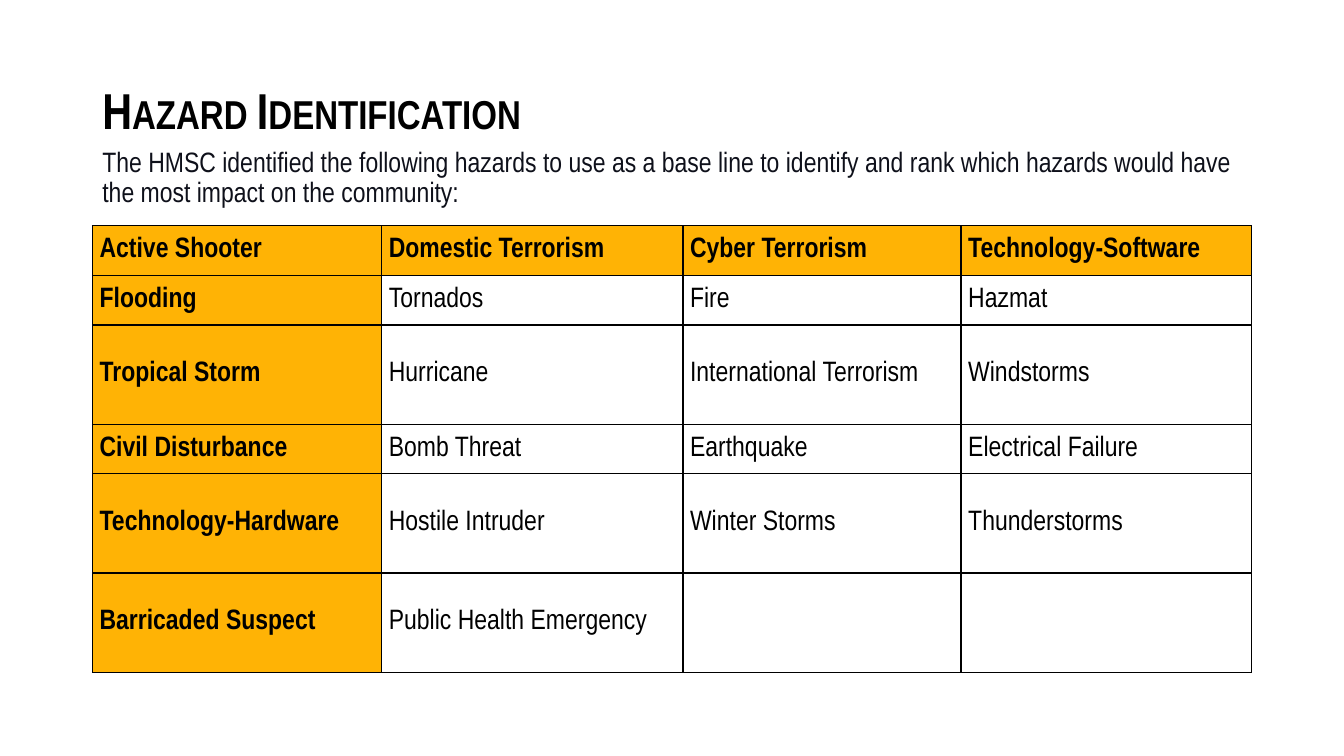
from dataclasses import dataclass

from lxml import etree
from pptx import Presentation
from pptx.dml.color import RGBColor
from pptx.enum.text import MSO_ANCHOR, PP_ALIGN
from pptx.oxml.ns import qn
from pptx.util import Cm, Pt

MIDDLE, TOP = MSO_ANCHOR.MIDDLE, MSO_ANCHOR.TOP
LEFT, JUSTIFY = PP_ALIGN.LEFT, PP_ALIGN.JUSTIFY


@dataclass(frozen=True)
class Theme:
    font: str = "Arial Narrow"
    black: str = "000000"
    ink: str = "0E101A"
    amber: str = "FFB305"
    white: str = "FFFFFF"
    title_size: int = 36
    text_size: int = 20
    border: int = 1


@dataclass(frozen=True)
class TextBlock:
    text: str
    top: float
    height: float
    size: int
    color: str
    anchor: MSO_ANCHOR
    bold: bool = False
    small_caps: bool = False
    space_before: int = 0


THEME = Theme()
MARGIN, CONTENT_WIDTH = 2.33, 29.21
TABLE_TOP = 5.69
COLUMN_WIDTHS = (7.29, 7.59, 7.01, 7.32)
ROW_HEIGHT = 1.25
ROW_UNITS = (1, 1, 2, 1, 2, 2)

BLOCKS = (
    TextBlock("Hazard Identification", 1.02, 3.68, THEME.title_size,
              THEME.black, MIDDLE, bold=True, small_caps=True),
    TextBlock("The HMSC identified the following hazards to use as a base line "
              "to identify and rank which hazards would have the most impact "
              "on the community:", 3.61, 2.0, THEME.text_size,
              THEME.ink, TOP, space_before=10),
)
HAZARDS = (
    ("Active Shooter", "Domestic Terrorism", "Cyber Terrorism", "Technology-Software"),
    ("Flooding", "Tornados", "Fire", "Hazmat"),
    ("Tropical Storm", "Hurricane", "International Terrorism", "Windstorms"),
    ("Civil Disturbance", "Bomb Threat", "Earthquake", "Electrical Failure"),
    ("Technology-Hardware", "Hostile Intruder", "Winter Storms", "Thunderstorms"),
    ("Barricaded Suspect", "Public Health Emergency", "", ""),
)


def set_all(target, values: dict) -> None:
    for name, value in values.items():
        setattr(target, name, value)


def add_run(p, text: str, size: int, color: str, bold: bool):
    r = p.add_run()
    r.text = text
    set_all(r.font, {"name": THEME.font, "size": Pt(size), "bold": bold})
    r.font.color.rgb = RGBColor.from_string(color)
    return r


def add_block(s, block: TextBlock) -> None:
    sp = s.shapes.add_textbox(Cm(MARGIN), Cm(block.top),
                              Cm(CONTENT_WIDTH), Cm(block.height))
    tf = sp.text_frame
    set_all(tf, {"word_wrap": True, "vertical_anchor": block.anchor})
    p = tf.paragraphs[0]
    set_all(p, {"alignment": LEFT, "line_spacing": 0.9,
                "space_before": Pt(block.space_before)})
    r = add_run(p, block.text, block.size, block.color, block.bold)
    if block.small_caps:
        r.font._element.set("cap", "small")


def add_borders(cell) -> None:
    """Outline all four sides; must run before the cell fill is set."""
    tc_pr = cell._tc.get_or_add_tcPr()
    for side in ("lnL", "lnR", "lnT", "lnB"):
        line = etree.SubElement(tc_pr, qn(f"a:{side}"), w=str(Pt(THEME.border)))
        fill = etree.SubElement(line, qn("a:solidFill"))
        etree.SubElement(fill, qn("a:srgbClr"), val=THEME.black)


def format_cell(cell, text: str, is_header: bool) -> None:
    add_borders(cell)
    cell.fill.solid()
    cell.fill.fore_color.rgb = RGBColor.from_string(
        THEME.amber if is_header else THEME.white)
    set_all(cell, {"vertical_anchor": MIDDLE, "margin_left": Cm(0.18),
                   "margin_right": Cm(0.18), "margin_top": 0, "margin_bottom": 0})
    if text:
        p = cell.text_frame.paragraphs[0]
        set_all(p, {"alignment": JUSTIFY, "space_before": Pt(6), "space_after": Pt(6)})
        add_run(p, text, THEME.text_size, THEME.black, is_header)


def add_hazard_table(s) -> None:
    table = s.shapes.add_table(
        len(HAZARDS), len(COLUMN_WIDTHS), Cm(MARGIN), Cm(TABLE_TOP),
        Cm(CONTENT_WIDTH), Cm(ROW_HEIGHT * sum(ROW_UNITS))).table
    set_all(table, {"first_row": False, "horz_banding": False})
    for column, width in zip(table.columns, COLUMN_WIDTHS):
        column.width = Cm(width)
    for row, units in zip(table.rows, ROW_UNITS):
        row.height = Cm(ROW_HEIGHT * units)
    for i, hazards in enumerate(HAZARDS):
        for j, hazard in enumerate(hazards):
            format_cell(table.cell(i, j), hazard, i == 0 or j == 0)


def main() -> None:
    prs = Presentation()
    set_all(prs, {"slide_width": Cm(33.87), "slide_height": Cm(19.05)})
    s = prs.slides.add_slide(prs.slide_layouts[6])
    for block in BLOCKS:
        add_block(s, block)
    add_hazard_table(s)
    prs.save("out.pptx")


if __name__ == "__main__":
    main()
